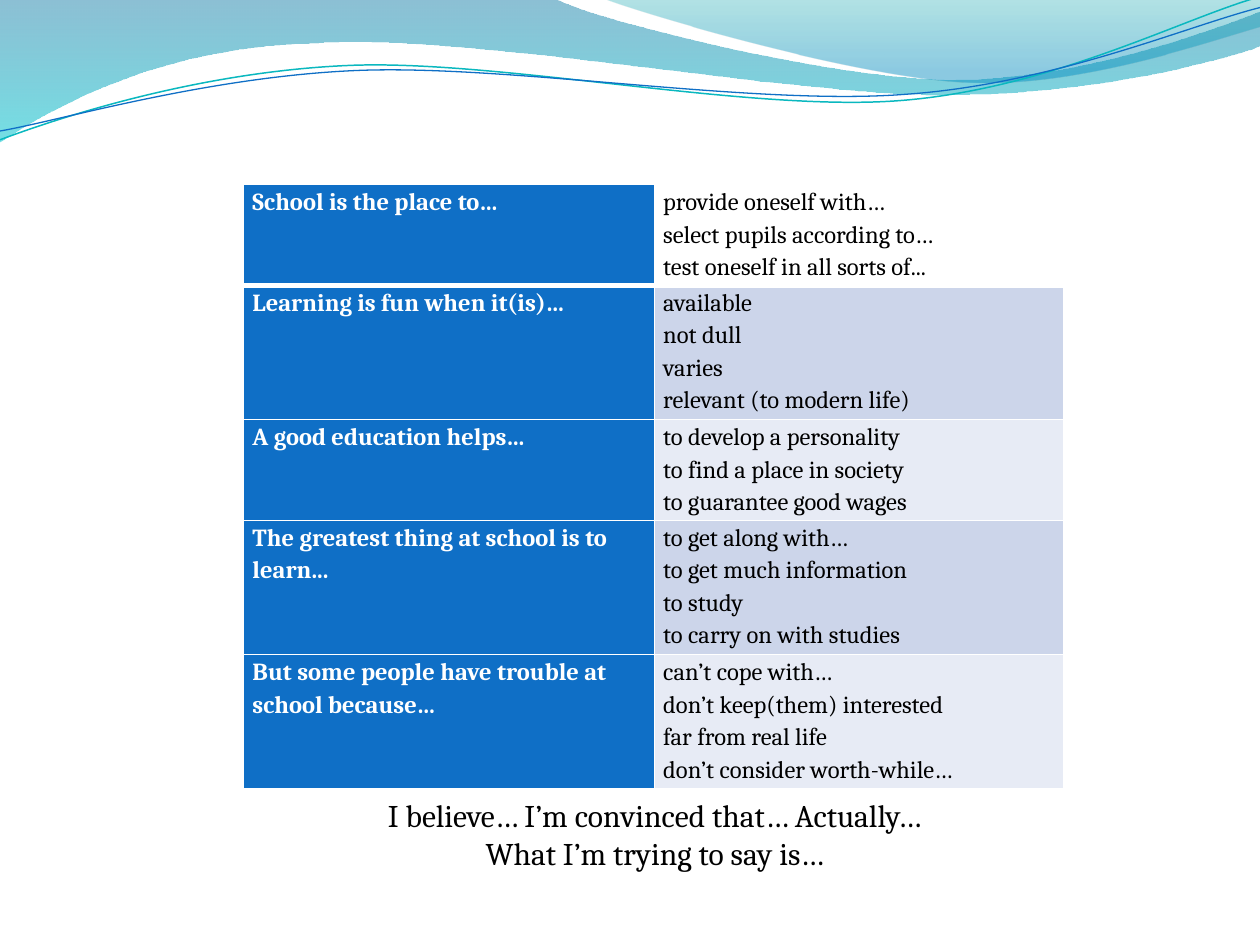
from lxml.etree import SubElement
from pptx import Presentation
from pptx.dml.color import RGBColor
from pptx.enum.text import MSO_AUTO_SIZE as AutoSize, PP_ALIGN as Align
from pptx.oxml.ns import qn
from pptx.util import Cm, Pt

FONT = "Cambria"
CM_PER_INCH = 2.54

WHITE = RGBColor(0xFF, 0xFF, 0xFF)
BLACK = RGBColor(0x00, 0x00, 0x00)
BLUE = RGBColor(0x0F, 0x6F, 0xC6)
TEAL = RGBColor(0x0A, 0xB8, 0xBF)
BAND_DARK = RGBColor(0xCC, 0xD5, 0xEA)
BAND_LIGHT = RGBColor(0xE7, 0xEB, 0xF5)
DEEP_BLUE = RGBColor(0x00, 0x74, 0xA1)
CYAN = RGBColor(0x00, 0xC6, 0xCF)
SEA_GREEN = RGBColor(0x00, 0xA1, 0xA9)
SKY_BLUE = RGBColor(0x00, 0x8B, 0xBF)

WIDE_WAVE = [
    (0, 0), (4.4, -0.01),
    (4.76, 0.17, 6.64, 0.63, 7.58, 0.63), (8.53, 0.63, 9.58, 0.26, 10, 0.09),
    (10.01, 0.36),
    (9.83, 0.44, 8.7, 0.76, 7.46, 0.75), (6.22, 0.75, 3.82, 0.28, 2.57, 0.34),
    (1.29, 0.36, 0.46, 0.83, -0.01, 1.13), (0, 0),
]
RIGHT_WAVE = [
    (4.79, -0.01),
    (5.09, 0.11, 6.82, 0.62, 7.69, 0.65), (8.56, 0.69, 9.61, 0.32, 10, 0.21),
    (10, 0), (4.79, -0.01),
]
TEAL_LINE = [
    (0, 1.11),
    (0.48, 0.93, 1.58, 0.57, 2.77, 0.52), (3.95, 0.47, 5.93, 0.89, 7.13, 0.8),
    (8.33, 0.71, 9.38, 0.15, 9.98, -0.02),
]
BLUE_LINE = [
    (0, 1.04),
    (0.47, 0.96, 1.64, 0.61, 2.83, 0.56), (4.03, 0.51, 5.97, 0.84, 7.17, 0.75),
    (8.36, 0.67, 9.41, 0.21, 10, 0.06),
]

PROMPTS = [
    ("School is the place to…", WHITE,
     ["provide oneself with…", "select pupils according to…",
      "test oneself in all sorts of..."]),
    ("Learning is fun when it(is)…", BAND_DARK,
     ["available", "not dull", "varies", "relevant (to modern life)"]),
    ("A good education helps…", BAND_LIGHT,
     ["to develop a personality", "to find a place in society",
      "to guarantee good wages"]),
    ("The greatest thing at school is to learn...", BAND_DARK,
     ["to get along with…", "to get much information", "to study",
      "to carry on with studies"]),
    ("But some people have trouble at school because…", BAND_LIGHT,
     ["can’t cope with…", "don’t keep(them) interested",
      "far from real life", "don’t consider worth-while…"]),
]
CLOSING = ["I believe… I’m convinced that… Actually…",
           "What I’m trying to say is…"]


def to_points(segment):
    """Split a segment, in inches, into slide points."""
    lengths = [Cm(value * CM_PER_INCH) for value in segment]
    return list(zip(lengths[::2], lengths[1::2]))


def bend(shape, segments):
    """Join the lines of each curved segment into one cubic curve."""
    lines = iter(list(shape._element.iter(qn("a:lnTo"))))
    for segment in segments:
        first, *others = [next(lines) for _ in to_points(segment)]
        if others:
            first.tag = qn("a:cubicBezTo")
        for line in others:
            first.append(line[0])
            line.getparent().remove(line)


def add_outline(page, segments, close):
    """Add a freeform along the given segments."""
    start, *rest = segments
    builder = page.shapes.build_freeform(*to_points(start)[0])
    for segment in rest:
        builder.add_line_segments(to_points(segment), close=False)
    if close:
        builder.add_line_segments([], close=True)
    shape = builder.convert_to_shape()
    bend(shape, rest)
    shape.shadow.inherit = False
    return shape


def add_wave(page, segments, stops):
    """Add a translucent wave shaded from top to bottom."""
    shape = add_outline(page, segments, True)
    shape.line.fill.background()
    shape.fill.gradient()
    shape.fill.gradient_angle = 270
    for stop, (position, color, _) in zip(shape.fill.gradient_stops, stops):
        stop.position = position
        stop.color.rgb = color
    for tag, (_, _, opacity) in zip(shape._element.spPr.iter(qn("a:srgbClr")), stops):
        SubElement(tag, qn("a:alpha"), val=str(opacity * 1000))


def add_curve(page, segments, color, width):
    """Add an open curved line."""
    shape = add_outline(page, segments, False)
    shape.fill.background()
    shape.line.color.rgb = color
    shape.line.width = Pt(width)


def write_lines(frame, lines, size, color, bold=False, align=None, spacing=None):
    """Write one paragraph for each line of text."""
    for index, line in enumerate(lines):
        para = frame.paragraphs[0] if index == 0 else frame.add_paragraph()
        para.alignment = align
        para.line_spacing = spacing
        span = para.add_run()
        span.text = line
        span.font.name = FONT
        span.font.size = Pt(size)
        span.font.bold = bold
        span.font.color.rgb = color


def set_borders(cell, widths):
    """Draw white borders of the given widths on a cell."""
    properties = cell._tc.get_or_add_tcPr()
    for side, width in widths.items():
        line = SubElement(properties, qn(f"a:ln{side}"), w=str(Pt(width)))
        fill = SubElement(line, qn("a:solidFill"))
        SubElement(fill, qn("a:srgbClr"), val=str(WHITE))


def fill_cell(cell, lines, fill, color, bold, widths):
    """Format a cell and write its lines."""
    cell.margin_left = cell.margin_right = Cm(0.18)
    cell.margin_top = cell.margin_bottom = 0
    set_borders(cell, widths)
    cell.fill.solid()
    cell.fill.fore_color.rgb = fill
    write_lines(cell.text_frame, lines, 14, color, bold, spacing=1.15)


def add_prompt_table(page):
    """Add the table of sentence openings and endings."""
    table = page.shapes.add_table(len(PROMPTS), 2, Cm(4.91), Cm(3.72),
                                  Cm(16.53), Cm(12.22)).table
    table.first_row = table.horz_banding = False
    for column, width in zip(table.columns, (8.28, 8.25)):
        column.width = Cm(width)
    for index, (opening, band, endings) in enumerate(PROMPTS):
        table.rows[index].height = Cm(2.03 if len(endings) == 3 else 2.71)
        widths = {"L": 1, "R": 1, "T": 3 if index == 1 else 1,
                  "B": 3 if index == 0 else 1}
        fill_cell(table.cell(index, 0), [opening], BLUE, WHITE, True, widths)
        fill_cell(table.cell(index, 1), endings, band, BLACK, False, widths)


def add_closing(page):
    """Add the centred phrases below the table."""
    box = page.shapes.add_textbox(Cm(4.9), Cm(15.93), Cm(16.61), Cm(1.8))
    box.text_frame.word_wrap = True
    box.text_frame.auto_size = AutoSize.SHAPE_TO_FIT_TEXT
    write_lines(box.text_frame, CLOSING, 18, BLACK, align=Align.CENTER)


def main():
    """Build the slide and save it."""
    deck = Presentation()
    deck.slide_width, deck.slide_height = Cm(25.4), Cm(19.05)
    page = deck.slides.add_slide(deck.slide_layouts[6])
    add_wave(page, WIDE_WAVE, [(0, DEEP_BLUE, 45), (1, CYAN, 55)])
    add_wave(page, RIGHT_WAVE, [(0, SEA_GREEN, 30), (0.8, SKY_BLUE, 45)])
    add_curve(page, TEAL_LINE, TEAL, 0.85)
    add_curve(page, BLUE_LINE, BLUE, 0.75)
    add_prompt_table(page)
    add_closing(page)
    deck.save("out.pptx")


if __name__ == "__main__":
    main()
